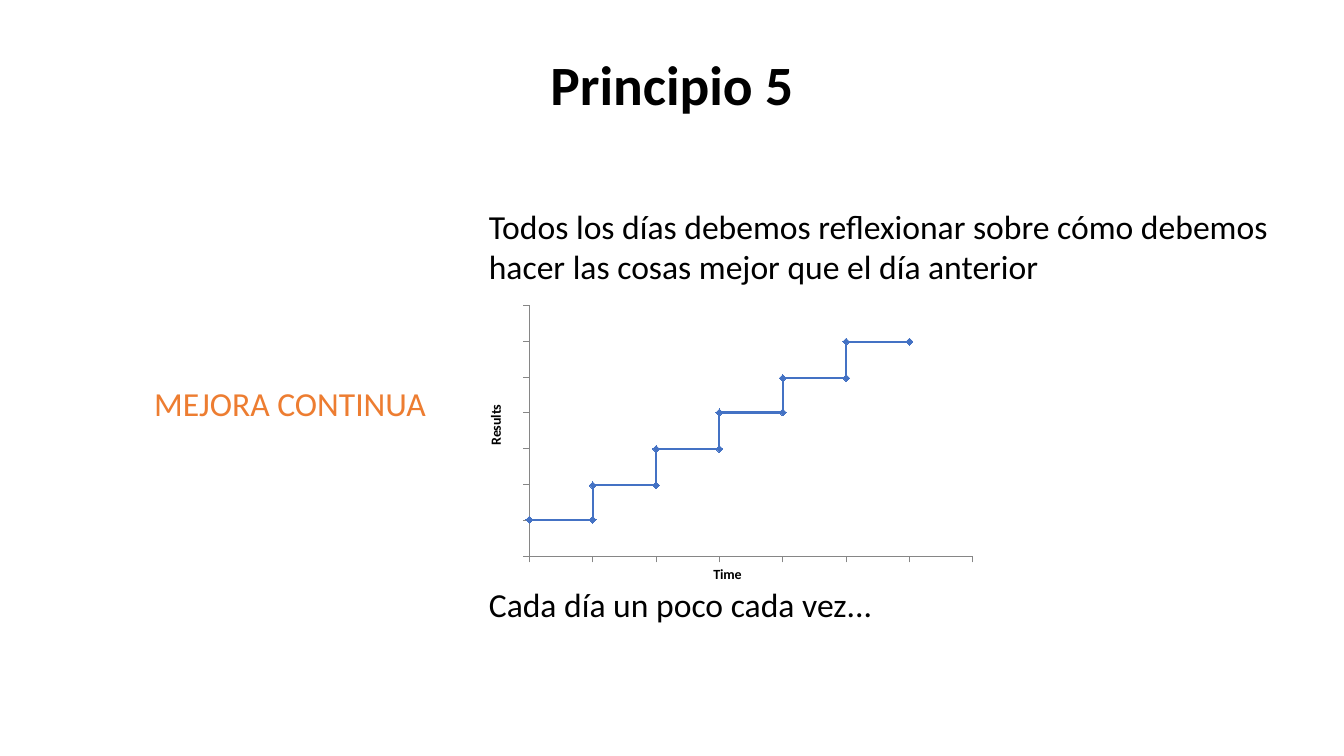
from dataclasses import dataclass

import pptx
import pptx.chart.data
import pptx.dml.color
import pptx.enum.chart
import pptx.enum.text
import pptx.oxml
import pptx.oxml.ns
import pptx.util

Inches, Pt = pptx.util.Inches, pptx.util.Pt
RGBColor = pptx.dml.color.RGBColor
PP_ALIGN, MSO_ANCHOR = pptx.enum.text.PP_ALIGN, pptx.enum.text.MSO_ANCHOR
XL = pptx.enum.chart
qn = pptx.oxml.ns.qn

BLACK = RGBColor(0, 0, 0)
ORANGE = RGBColor(0xED, 0x7D, 0x31)
BLUE = RGBColor(0x44, 0x72, 0xC4)
GRAY = RGBColor(0x86, 0x86, 0x86)
FONT = "Calibri"
LEVELS = (17, 33, 50, 67, 83, 100)
STEP_TIME = 20
INTERVALS = 7


@dataclass
class TextBlock:
    box: tuple[float, float, float, float]
    paragraphs: list[list[str]]
    size: float = 24
    color: RGBColor = BLACK
    bold: bool = False
    wrap: bool = True
    align: PP_ALIGN = PP_ALIGN.LEFT
    anchor: MSO_ANCHOR = MSO_ANCHOR.TOP
    line_spacing: float = 1.0
    gap: float = 0


@dataclass
class AxisStyle:
    title: str
    title_at: tuple[float, float]
    maximum: float
    unit: float


BLOCKS = [
    TextBlock((1.43, 3.75, 3, 0.5), [["MEJORA CONTINUA"]], color=ORANGE, wrap=False),
    TextBlock(
        (4.75, 1.99, 8.75, 4.5),
        [["Todos los días debemos reflexionar sobre cómo debemos",
          "hacer las cosas mejor que el día anterior"],
         ["Cada día un poco cada vez..."]],
        gap=213,
    ),
    TextBlock((0, 0.55, 13.33, 0.68), [["Principio 5"]], size=39.6, bold=True,
              align=PP_ALIGN.CENTER, anchor=MSO_ANCHOR.MIDDLE, line_spacing=0.8),
]
TIME = AxisStyle("Time", (0.46, 0.87), STEP_TIME * INTERVALS, STEP_TIME)
RESULTS = AxisStyle("Results", (0.01, 0.34), 16.7 * INTERVALS, 16.7)


def add_text(slide, block: TextBlock) -> None:
    sp = slide.shapes.add_textbox(*map(Inches, block.box))
    tf = sp.text_frame
    tf.word_wrap = block.wrap
    tf.vertical_anchor = block.anchor
    for i, lines in enumerate(block.paragraphs):
        p = tf.add_paragraph() if i else tf.paragraphs[0]
        p.alignment = block.align
        p.line_spacing = block.line_spacing
        if i:
            p.space_before = Pt(block.gap)
        for j, line in enumerate(lines):
            if j:
                p.add_line_break()
            r = p.add_run()
            r.text = line
            r.font.name = FONT
            r.font.size = Pt(block.size)
            r.font.bold = block.bold
            r.font.color.rgb = block.color


def manual_layout(target: str = "", **fractions: float):
    """Build a c:layout from fractions of the chart area."""
    inner = f'<c:layoutTarget val="{target}"/>' if target else ""
    inner += '<c:xMode val="edge"/><c:yMode val="edge"/>'
    inner += "".join(f'<c:{k} val="{v}"/>' for k, v in fractions.items())
    return pptx.oxml.parse_xml(
        f'<c:layout {pptx.oxml.ns.nsdecls("c")}>'
        f"<c:manualLayout>{inner}</c:manualLayout></c:layout>")


def replace_layout(parent, layout, index: int) -> None:
    for old in parent.findall(qn("c:layout")):
        parent.remove(old)
    parent.insert(index, layout)


def style_axis(axis, style: AxisStyle) -> None:
    axis.minimum_scale = 0
    axis.maximum_scale = style.maximum
    axis.major_unit = style.unit
    axis.has_major_gridlines = False
    axis.major_tick_mark = XL.XL_TICK_MARK.OUTSIDE
    axis.minor_tick_mark = XL.XL_TICK_MARK.NONE
    axis.tick_label_position = XL.XL_TICK_LABEL_POSITION.NONE
    axis.format.line.color.rgb = GRAY
    axis.format.line.width = Pt(0.75)
    title = axis.axis_title
    r = title.text_frame.paragraphs[0].add_run()
    r.text = style.title
    r.font.name = FONT
    r.font.size = Pt(10)
    r.font.bold = True
    r.font.color.rgb = BLACK
    x, y = style.title_at
    replace_layout(title._element, manual_layout(x=x, y=y), 1)


def add_staircase_chart(slide) -> None:
    data = pptx.chart.data.XyChartData()
    steps = data.add_series("Series 1")
    for i, level in enumerate(LEVELS):
        steps.add_data_point(i * STEP_TIME, level)
        steps.add_data_point((i + 1) * STEP_TIME, level)
    chart = slide.shapes.add_chart(
        XL.XL_CHART_TYPE.XY_SCATTER_LINES,
        Inches(4.75), Inches(2.97), Inches(5), Inches(3), data).chart
    chart.has_legend = False
    chart.has_title = False
    chart.font.name = FONT
    chart.font.size = Pt(10)
    chart.font.color.rgb = BLACK
    style_axis(chart.category_axis, TIME)
    style_axis(chart.value_axis, RESULTS)
    plot = chart.plots[0]
    plot.vary_by_categories = False
    series = plot.series[0]
    series.smooth = False
    series.format.line.color.rgb = BLUE
    series.format.line.width = Pt(1.5)
    marker = series.marker
    marker.style = XL.XL_MARKER_STYLE.DIAMOND
    marker.size = 5
    marker.format.fill.solid()
    marker.format.fill.fore_color.rgb = BLUE
    marker.format.line.color.rgb = BLUE
    plot_area = chart._chartSpace.find(".//" + qn("c:plotArea"))
    replace_layout(plot_area, manual_layout("inner", x=0.1, y=0.02, w=0.88, h=0.83), 0)


def main() -> None:
    prs = pptx.Presentation()
    prs.slide_width, prs.slide_height = Inches(13.33), Inches(7.5)
    slide = prs.slides.add_slide(prs.slide_layouts[6])
    label, body, title = BLOCKS
    add_text(slide, label)
    add_text(slide, body)
    add_staircase_chart(slide)
    add_text(slide, title)
    prs.save("out.pptx")


if __name__ == "__main__":
    main()
